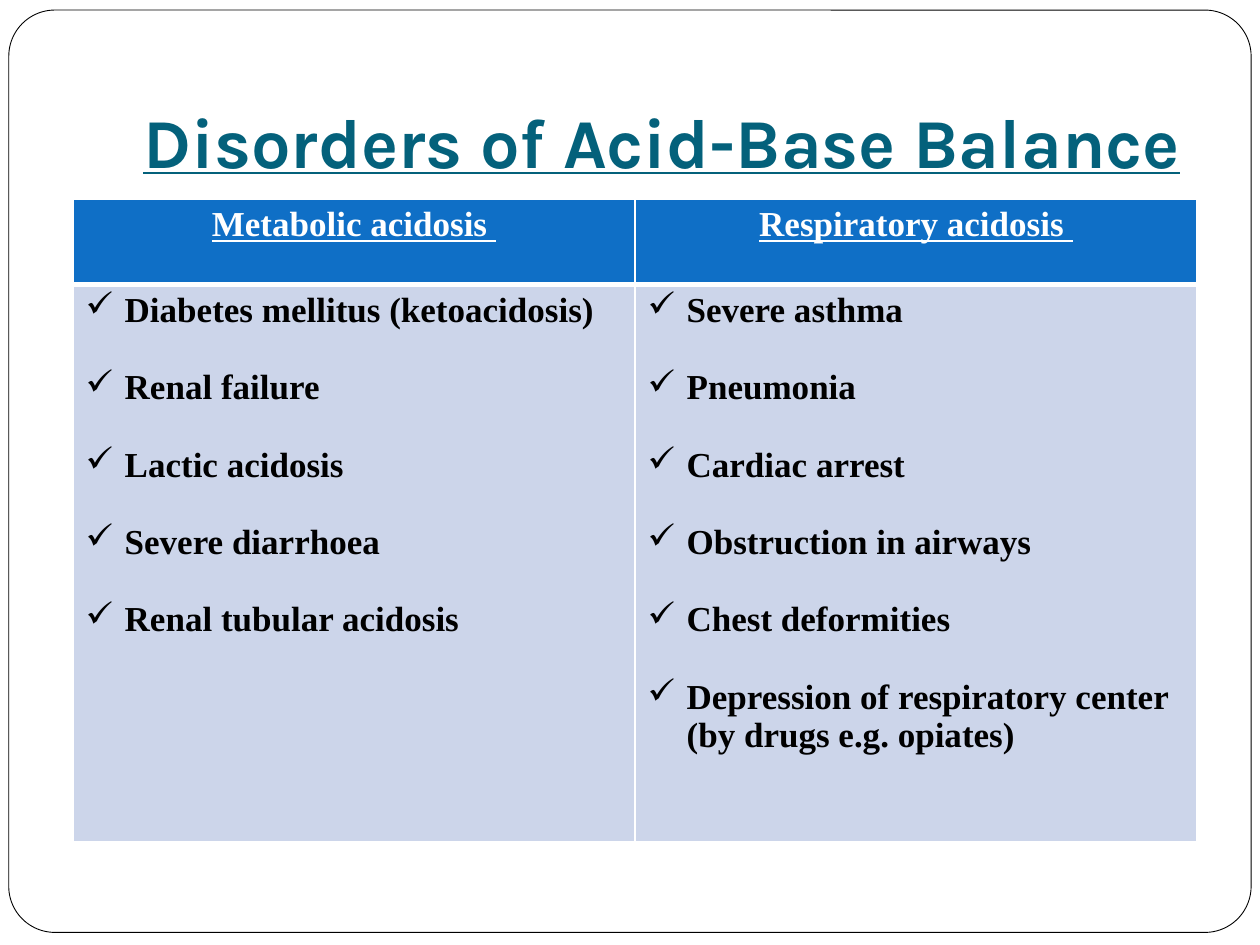
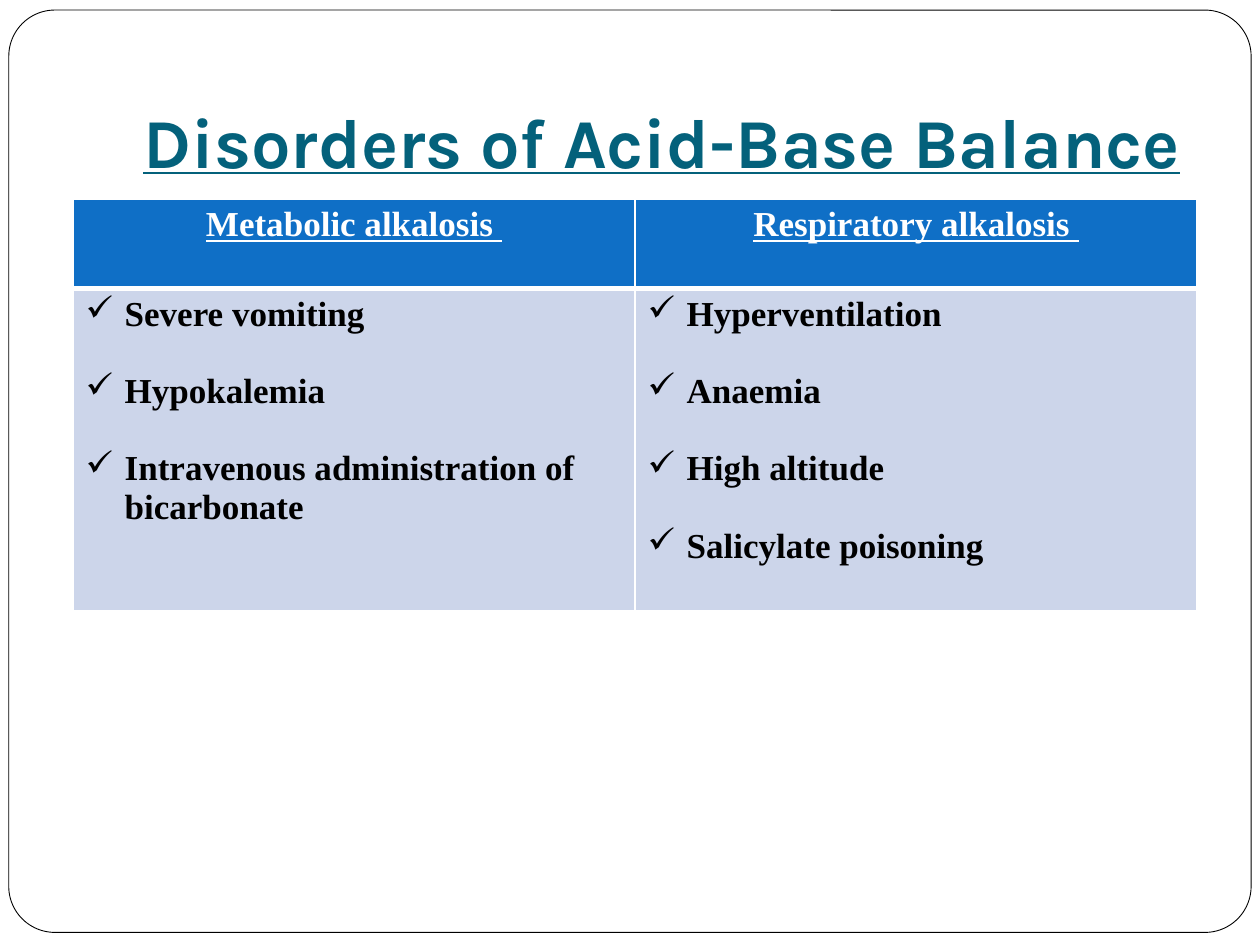
from pptx import Presentation
from pptx.dml.color import RGBColor
from pptx.enum.shapes import MSO_SHAPE
from pptx.enum.text import MSO_ANCHOR, MSO_AUTO_SIZE, PP_ALIGN
from pptx.oxml.ns import qn
from pptx.util import Inches, Pt
from lxml.etree import SubElement

WHITE = "FFFFFF"
BLACK = "000000"
TEAL = "04617B"
HEADER_BLUE = "0F6FC6"
BODY_BLUE = "CCD5EA"
TITLE_FONT = "Karla"
TABLE_FONT = "Times New Roman"
TITLE = "Disorders of Acid-Base Balance"
COLUMN_WIDTH = 4.46
CAUSE_GAP = 22

ACIDOSIS = {
    "Metabolic acidosis ": [
        "Diabetes mellitus (ketoacidosis)",
        "Renal failure",
        "Lactic acidosis",
        "Severe diarrhoea",
        "Renal tubular acidosis",
    ],
    "Respiratory acidosis ": [
        "Severe asthma",
        "Pneumonia",
        "Cardiac arrest",
        "Obstruction in airways",
        "Chest deformities",
        "Depression of respiratory center (by drugs e.g. opiates)",
    ],
}
ALKALOSIS = {
    "Metabolic alkalosis ": [
        "Severe vomiting",
        "Hypokalemia",
        "Intravenous administration of bicarbonate",
    ],
    "Respiratory alkalosis ": [
        "Hyperventilation",
        "Anaemia",
        "High altitude",
        "Salicylate poisoning",
    ],
}


def color(value):
    return RGBColor.from_string(value)


def add_span(para, text, font, size, ink, underline=False):
    span = para.add_run()
    span.text = text
    span.font.name = font
    span.font.size = Pt(size)
    span.font.bold = True
    span.font.underline = underline
    span.font.color.rgb = color(ink)


def add_frame(page):
    frame = page.shapes.add_shape(
        MSO_SHAPE.ROUNDED_RECTANGLE,
        Inches(0.07), Inches(0.08), Inches(9.86), Inches(7.32),
    )
    frame.adjustments[0] = 0.05
    frame.shadow.inherit = False
    frame.fill.solid()
    frame.fill.fore_color.rgb = color(WHITE)
    frame.line.color.rgb = color(BLACK)
    frame.line.width = Pt(0.5)
    page.shapes._spTree.insert(2, frame._element)


def set_title(page):
    title = page.shapes.title
    title.left, title.top = Inches(1), Inches(0.3)
    title.width, title.height = Inches(8.5), Inches(1.25)
    box = title.text_frame
    box.auto_size = MSO_AUTO_SIZE.NONE
    box.word_wrap = True
    box.vertical_anchor = MSO_ANCHOR.BOTTOM
    box.margin_left = box.margin_right = box.margin_bottom = Inches(0.1)
    box.margin_top = Inches(0.05)
    para = box.paragraphs[0]
    para.alignment = PP_ALIGN.CENTER
    add_span(para, TITLE, TITLE_FONT, 40, TEAL, underline=True)


def style_cell(cell, fill, top, bottom):
    properties = cell._tc.get_or_add_tcPr()
    for side, width in (("L", 1), ("R", 1), ("T", top), ("B", bottom)):
        border = SubElement(properties, qn(f"a:ln{side}"), w=str(Pt(width)))
        paint = SubElement(border, qn("a:solidFill"))
        SubElement(paint, qn("a:srgbClr"), val=WHITE)
    cell.fill.solid()
    cell.fill.fore_color.rgb = color(fill)


def add_check(para):
    properties = para._p.get_or_add_pPr()
    properties.set("marL", str(Inches(0.31)))
    properties.set("indent", str(-Inches(0.31)))
    SubElement(properties, qn("a:buChar"), char="✓")


def fill_header(cell, heading):
    style_cell(cell, HEADER_BLUE, top=1, bottom=3)
    para = cell.text_frame.paragraphs[0]
    para.alignment = PP_ALIGN.CENTER
    add_span(para, heading, TABLE_FONT, 20, WHITE, underline=True)


def fill_causes(cell, causes):
    style_cell(cell, BODY_BLUE, top=3, bottom=1)
    box = cell.text_frame
    for index, cause in enumerate(causes):
        para = box.add_paragraph() if index else box.paragraphs[0]
        if index:
            para.space_before = Pt(CAUSE_GAP)
        add_check(para)
        add_span(para, cause, TABLE_FONT, 20, BLACK)


def add_disorder_table(page, disorders, row_heights):
    table = page.shapes.add_table(
        len(row_heights), len(disorders), Inches(0.58), Inches(1.58),
        Inches(COLUMN_WIDTH * len(disorders)), Inches(sum(row_heights)),
    ).table
    for row, height in zip(table.rows, row_heights):
        row.height = Inches(height)
    for index, (heading, causes) in enumerate(disorders.items()):
        table.columns[index].width = Inches(COLUMN_WIDTH)
        fill_header(table.cell(0, index), heading)
        fill_causes(table.cell(1, index), causes)


def add_disorder_page(deck, disorders, row_heights):
    page = deck.slides.add_slide(deck.slide_layouts[5])
    add_frame(page)
    set_title(page)
    add_disorder_table(page, disorders, row_heights)


def main():
    deck = Presentation()
    deck.slide_width, deck.slide_height = Inches(10), Inches(7.5)
    add_disorder_page(deck, ACIDOSIS, (0.68, 4.42))
    add_disorder_page(deck, ALKALOSIS, (0.71, 2.56))
    deck.save("out.pptx")


if __name__ == "__main__":
    main()
